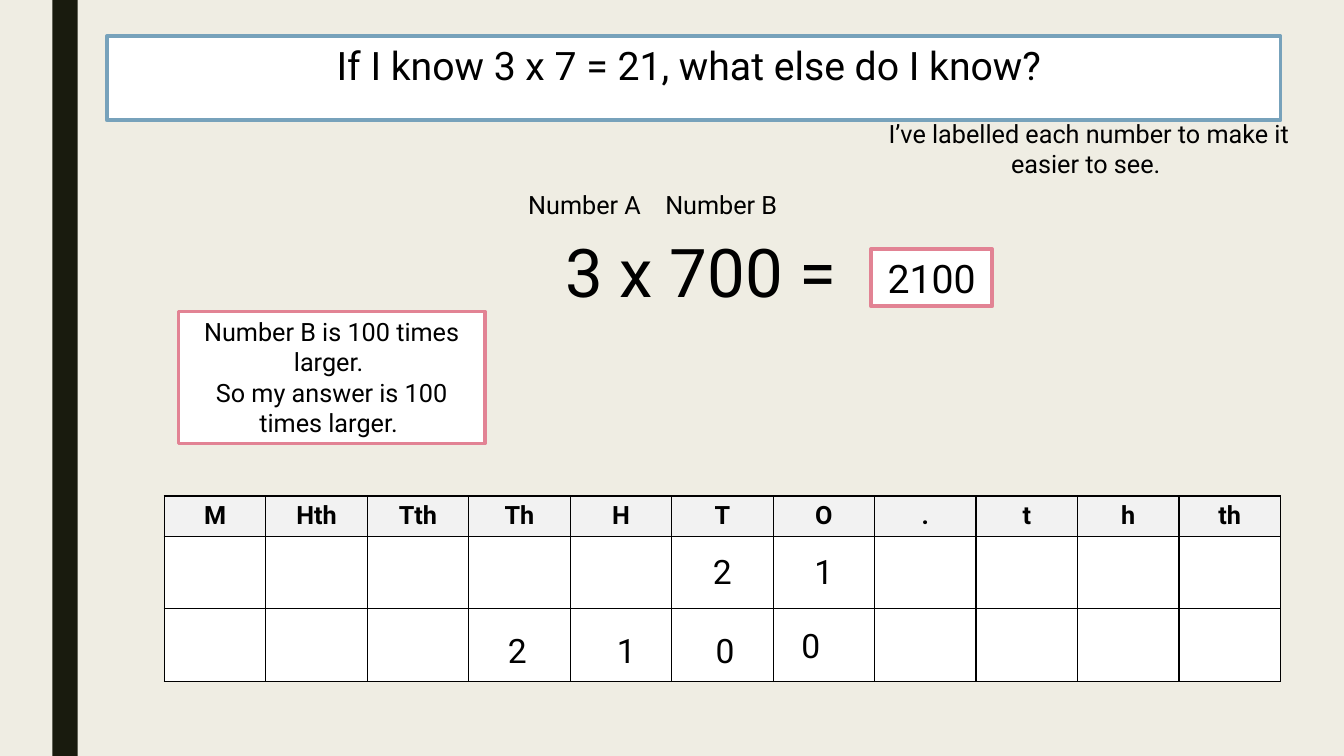
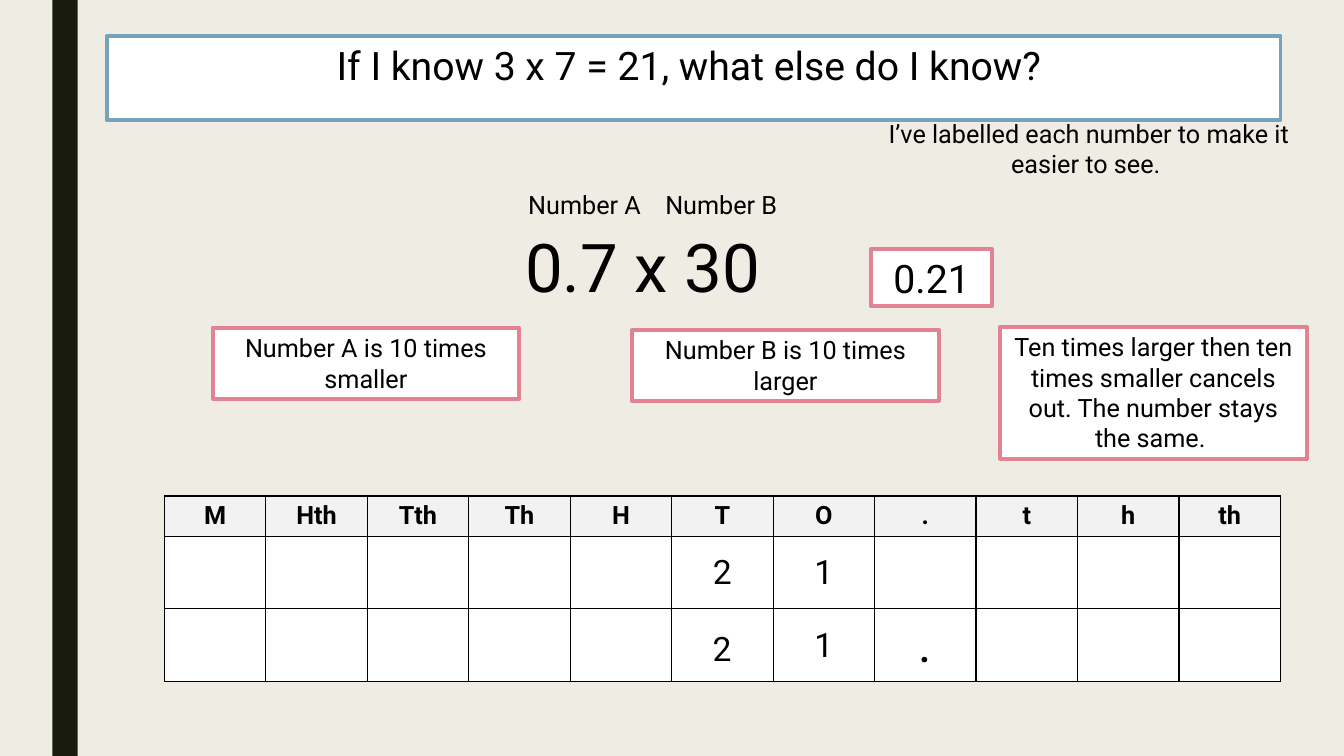
"""Build two place-value lesson slides about related multiplication facts."""
from dataclasses import dataclass
from typing import Optional

from lxml.etree import SubElement
from pptx import Presentation
from pptx.dml.color import RGBColor
from pptx.enum.shapes import MSO_SHAPE
from pptx.enum.text import MSO_ANCHOR, MSO_AUTO_SIZE, PP_ALIGN
from pptx.oxml.ns import qn
from pptx.util import Inches, Pt


@dataclass(frozen=True)
class Theme:
    font: str = "Roboto"
    background: str = "EFEDE3"
    band: str = "191B0E"
    ink: str = "000000"
    paper: str = "FFFFFF"
    header: str = "F2F2F2"
    blue: str = "77A2BB"
    pink: str = "E28394"
    body: int = 18
    digit: int = 24
    heading: int = 28
    point: int = 36
    sum: int = 48
    outline: float = 2.75
    grid: int = 1


@dataclass(frozen=True)
class Box:
    left: float
    top: float
    width: float
    height: float


@dataclass(frozen=True)
class Note:
    box: Box
    lines: tuple[str, ...]


@dataclass(frozen=True)
class Digit:
    text: str
    left: float
    top: float


@dataclass(frozen=True)
class Lesson:
    sum: str
    sum_box: Box
    answer: str
    notes: tuple[Note, ...]
    digits: tuple[Digit, ...]
    point_column: Optional[int] = None


THEME = Theme()
TITLE = "If I know 3 x 7 = 21, what else do I know? "
HINT = "I’ve labelled each number to make it easier to see. "
TITLE_BOX = Box(1.06, 0.36, 11.64, 0.57)
HINT_BOX = Box(8.65, 1.12, 4.3, 0.71)
ANSWER_BOX = Box(8.64, 2.47, 1.2, 0.57)
TABLE_BOX = Box(1.63, 4.92, 11.07, 1.84)
LABELS = (Note(Box(5.14, 1.83, 1.32, 0.4), ("Number A",)),
          Note(Box(6.5, 1.83, 1.34, 0.4), ("Number B",)))
PLACES = ("M", "Hth", "Tth", "Th", "H", "T", "O", ".", "t", "h", "th")
ROW_HEIGHTS = (0.4, 0.72, 0.72)
KNOWN_FACT = {PLACES.index("T"): "2", PLACES.index("O"): "1"}

LESSONS = (
    Lesson(
        "3 x 700 =", Box(5.51, 2.24, 3.13, 0.91), "2100",
        (Note(Box(1.77, 3.09, 3.04, 1.31),
              ("Number B is 100 times larger. ",
               "So my answer is 100 times larger. ")),),
        (Digit("2", 4.94, 6.2), Digit("1", 6.02, 6.2),
         Digit("0", 7, 6.2), Digit("0", 7.85, 6.15)),
    ),
    Lesson(
        "0.7 x 30", Box(5.11, 2.19, 2.57, 0.91), "0.21",
        (Note(Box(2.11, 3.25, 3.04, 0.71), ("Number A is 10 times smaller",)),
         Note(Box(6.27, 3.27, 3.04, 0.71), ("Number B is 10 times larger",)),
         Note(Box(9.92, 3.24, 3.04, 1.31),
              ("Ten times larger then ten times smaller cancels out. "
               "The number stays the same. ",))),
        (Digit("2", 6.97, 6.18), Digit("1", 7.98, 6.14)),
        PLACES.index("."),
    ),
)


def rgb(value: str) -> RGBColor:
    """Turn a hex string into a colour."""
    return RGBColor.from_string(value)


def place(box: Box) -> tuple[int, ...]:
    """Give the left, top, width and height of a box as lengths."""
    return tuple(Inches(side) for side in (box.left, box.top, box.width, box.height))


def write(frame, lines: tuple[str, ...], size: int,
          align: PP_ALIGN = PP_ALIGN.CENTER, bold: bool = False) -> None:
    """Write one paragraph per line with the shared font."""
    for index, line in enumerate(lines):
        paragraph = frame.add_paragraph() if index else frame.paragraphs[0]
        paragraph.alignment = align
        run = paragraph.add_run()
        run.text = line
        run.font.name = THEME.font
        run.font.size = Pt(size)
        run.font.bold = bold
        run.font.color.rgb = rgb(THEME.ink)


def style_panel(panel, outline: str, lines: tuple[str, ...], size: int) -> None:
    """Give a panel its white fill, coloured outline and centred text."""
    panel.fill.solid()
    panel.fill.fore_color.rgb = rgb(THEME.paper)
    panel.line.color.rgb = rgb(outline)
    panel.line.width = Pt(THEME.outline)
    frame = panel.text_frame
    frame.word_wrap = True
    frame.auto_size = MSO_AUTO_SIZE.SHAPE_TO_FIT_TEXT
    frame.vertical_anchor = MSO_ANCHOR.TOP
    write(frame, lines, size)


def add_panel(slide, note: Note, size: int) -> None:
    """Add a pink-outlined panel."""
    panel = slide.shapes.add_shape(MSO_SHAPE.RECTANGLE, *place(note.box))
    panel.shadow.inherit = False
    style_panel(panel, THEME.pink, note.lines, size)


def add_label(slide, note: Note, size: int, wrap: bool = False) -> None:
    """Add plain text, centred where it wraps."""
    frame = slide.shapes.add_textbox(*place(note.box)).text_frame
    frame.word_wrap = wrap
    frame.auto_size = MSO_AUTO_SIZE.SHAPE_TO_FIT_TEXT
    write(frame, note.lines, size, PP_ALIGN.CENTER if wrap else PP_ALIGN.LEFT)


def style_cell(cell, fill: str) -> None:
    """Draw the four borders of a cell and fill it."""
    properties = cell._tc.get_or_add_tcPr()
    for side in ("lnL", "lnR", "lnT", "lnB"):
        border = SubElement(properties, qn(f"a:{side}"), w=str(Pt(THEME.grid)))
        solid = SubElement(border, qn("a:solidFill"))
        SubElement(solid, qn("a:srgbClr"), val=THEME.ink)
    cell.fill.solid()
    cell.fill.fore_color.rgb = rgb(fill)


def add_place_value_table(slide, point_column: Optional[int]) -> None:
    """Add the place-value grid holding the known fact."""
    grid = slide.shapes.add_table(
        len(ROW_HEIGHTS), len(PLACES), *place(TABLE_BOX)).table
    grid.horz_banding = False
    for column in grid.columns:
        column.width = Inches(TABLE_BOX.width / len(PLACES))
    for row, height in zip(grid.rows, ROW_HEIGHTS):
        row.height = Inches(height)
    for column, heading in enumerate(PLACES):
        header, known, answer = (grid.cell(row, column) for row in range(3))
        style_cell(header, THEME.header)
        write(header.text_frame, (heading,), THEME.body, bold=True)
        for cell in (known, answer):
            style_cell(cell, THEME.paper)
            cell.vertical_anchor = MSO_ANCHOR.MIDDLE
        if column in KNOWN_FACT:
            write(known.text_frame, (KNOWN_FACT[column],), THEME.digit)
        if column == point_column:
            write(answer.text_frame, (".",), THEME.point)


def add_lesson(deck, layout, lesson: Lesson):
    """Add one lesson slide."""
    slide = deck.slides.add_slide(layout)
    title = slide.shapes.title
    title.left, title.top, title.width, title.height = place(TITLE_BOX)
    style_panel(title, THEME.blue, (TITLE,), THEME.heading)
    add_place_value_table(slide, lesson.point_column)
    add_label(slide, Note(lesson.sum_box, (lesson.sum,)), THEME.sum)
    for label in LABELS:
        add_label(slide, label, THEME.body)
    add_label(slide, Note(HINT_BOX, (HINT,)), THEME.body, wrap=True)
    for note in lesson.notes:
        add_panel(slide, note, THEME.body)
    add_panel(slide, Note(ANSWER_BOX, (lesson.answer,)), THEME.heading)
    for digit in lesson.digits:
        box = Box(digit.left, digit.top, 0.4, 0.5)
        add_label(slide, Note(box, (digit.text,)), THEME.digit)
    return slide


def move_band_to_layout(slide, layout) -> None:
    """Draw the side band and hand it to the layout that all slides share."""
    band = slide.shapes.add_shape(
        MSO_SHAPE.RECTANGLE, *place(Box(0.52, 0, 0.25, 7.5)))
    band.shadow.inherit = False
    band.fill.solid()
    band.fill.fore_color.rgb = rgb(THEME.band)
    band.line.fill.background()
    layout.shapes.element.insert(2, band.element)


def main() -> None:
    """Build and save the deck."""
    deck = Presentation()
    deck.slide_width, deck.slide_height = Inches(13.33), Inches(7.5)
    layout = deck.slide_layouts.get_by_name("Title Only")
    layout.background.fill.solid()
    layout.background.fill.fore_color.rgb = rgb(THEME.background)
    slides = [add_lesson(deck, layout, lesson) for lesson in LESSONS]
    move_band_to_layout(slides[0], layout)
    deck.save("out.pptx")


if __name__ == "__main__":
    main()
